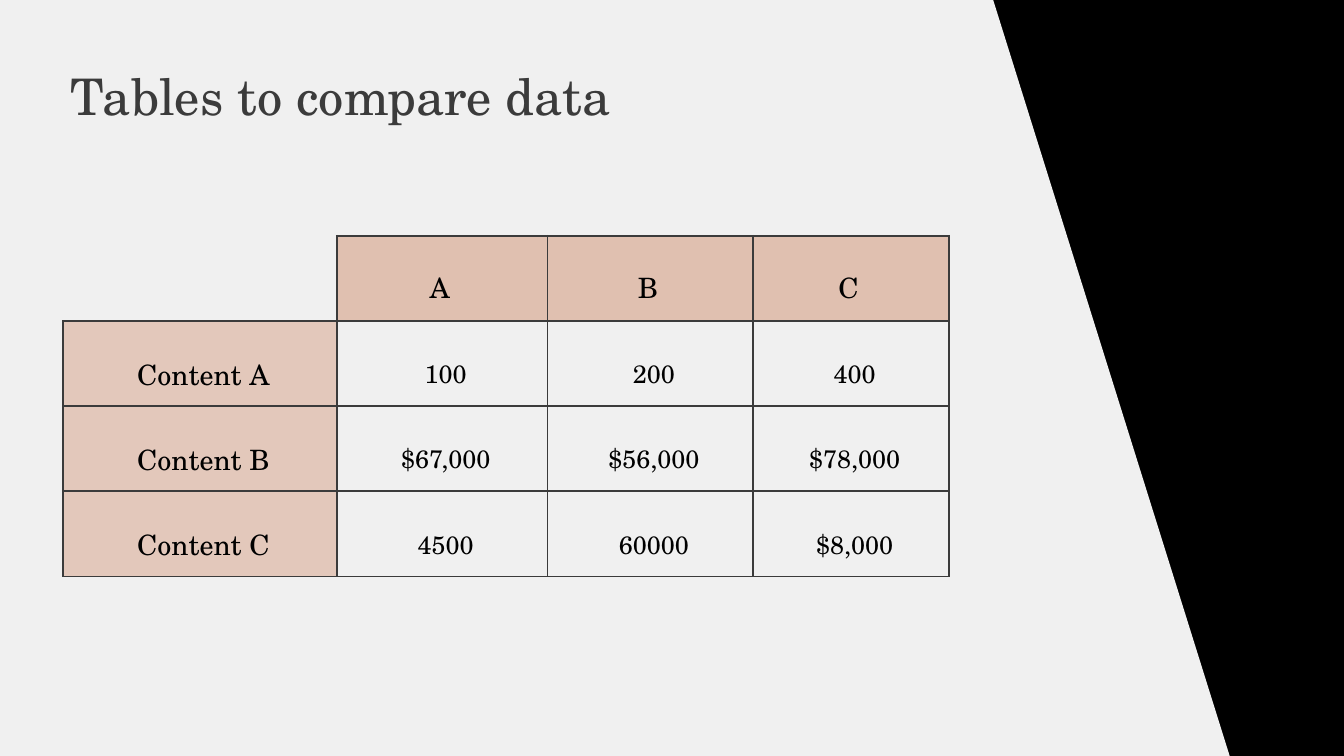
"""Build a slide with a comparison table on a slanted light panel."""
from dataclasses import dataclass
from typing import Any

from lxml import etree as et
from pptx import Presentation
from pptx import util as u
from pptx.dml import color as col
from pptx.enum import text as tx
from pptx.oxml import ns

WIDE, HIGH = u.Inches(13.33), u.Inches(7.5)


@dataclass(frozen=True)
class Theme:
    """Colours, font and type sizes."""
    back: str = "000000"
    panel: str = "F0F0F0"
    ink: str = "000000"
    dark: str = "3B3B3B"
    tint: str = "BD541E"
    face: str = "TeX Gyre Schola"
    title: float = 36
    label: float = 20
    value: float = 18
    rule: float = 1.5


@dataclass(frozen=True)
class Look:
    """Format of one kind of table cell; insets are percent shares of the slide."""
    size: float
    alpha: int
    left: float = 0.9
    top: float = 2.93
    right: float = 0.38
    base: float = 0.27
    anchor: Any = tx.MSO_ANCHOR.MIDDLE


T = Theme()
HEAD = Look(T.label, 30, left=0, top=4.13, base=0, anchor=tx.MSO_ANCHOR.TOP)
SIDE = Look(T.label, 25)
BODY = Look(T.value, 0)
EDGE = [(0, 0), (73.9, 0), (91.5, 100), (0, 100)]
COLS = [20.37, 15.67, 15.32, 14.55]
ROW = 11.27
DATA = [
    ["", "A", "B", "C"],
    ["Content A", "100", "200", "400"],
    ["Content B", "$67,000", "$56,000", "$78,000"],
    ["Content C", "4500", "60000", "$8,000"],
]


def across(pct: float) -> int:
    """Turn a percent of the slide width into a length."""
    return u.Emu(round(WIDE * pct / 100))


def down(pct: float) -> int:
    """Turn a percent of the slide height into a length."""
    return u.Emu(round(HIGH * pct / 100))


def apply(item: Any, form: dict[str, Any]) -> None:
    """Set each named value on an object."""
    for name, value in form.items():
        setattr(item, name, value)


def paint(fill: Any, hue: str) -> None:
    """Give a fill one solid colour."""
    fill.solid()
    fill.fore_color.rgb = col.RGBColor.from_string(hue)


def write(frame: Any, words: str, size: float, hue: str, align: Any) -> None:
    """Put one styled line into a text frame."""
    para = frame.paragraphs[0]
    para.alignment = align
    run = para.add_run()
    run.text = words
    apply(run.font, {"name": T.face, "size": u.Pt(size), "bold": False})
    run.font.color.rgb = col.RGBColor.from_string(hue)


def border(cell: Any, shown: str) -> None:
    """Draw the named sides of a cell and hide the others."""
    props = cell._tc.get_or_add_tcPr()
    for spot, side in enumerate("LRTB"):
        line = et.Element(ns.qn(f"a:ln{side}"), w=str(u.Pt(T.rule)))
        if side in shown:
            solid = et.SubElement(line, ns.qn("a:solidFill"))
            et.SubElement(solid, ns.qn("a:srgbClr"), val=T.dark)
        else:
            et.SubElement(line, ns.qn("a:noFill"))
        props.insert(spot, line)


def dress(cell: Any, words: str, look: Look) -> None:
    """Fill, inset and write one table cell."""
    apply(cell, {
        "margin_left": across(look.left), "margin_right": across(look.right),
        "margin_top": down(look.top), "margin_bottom": down(look.base),
        "vertical_anchor": look.anchor,
    })
    if words and look.alpha:
        paint(cell.fill, T.tint)
        tone = cell._tc.tcPr.find(f".//{ns.qn('a:srgbClr')}")
        et.SubElement(tone, ns.qn("a:alpha"), val=str(look.alpha * 1000))
    else:
        cell.fill.background()
    if words:
        write(cell.text_frame, words, look.size, T.ink, tx.PP_ALIGN.CENTER)
    border(cell, "LRTB" if words else "RB")


def panel(slide: Any) -> None:
    """Draw the light slanted panel."""
    spots = [(across(x), down(y)) for x, y in EDGE]
    build = slide.shapes.build_freeform(*spots[0])
    build.add_line_segments(spots[1:])
    shape = build.convert_to_shape()
    shape.shadow.inherit = False
    paint(shape.fill, T.panel)
    shape.line.fill.background()


def table(slide: Any) -> None:
    """Draw the comparison table."""
    grid = slide.shapes.add_table(
        len(DATA), len(COLS), across(4.7), down(31.2),
        across(sum(COLS)), down(ROW * len(DATA))).table
    apply(grid, {"first_row": False, "horz_banding": False})
    for part, share in zip(grid.columns, COLS):
        part.width = across(share)
    for r, line in enumerate(DATA):
        grid.rows[r].height = down(ROW)
        for c, words in enumerate(line):
            look = HEAD if r == 0 else SIDE if c == 0 else BODY
            dress(grid.cell(r, c), words, look)


def title(slide: Any) -> None:
    """Write the slide title."""
    box = slide.shapes.add_textbox(across(4.5), down(8), across(70.9), down(9.47))
    apply(box.text_frame, {
        "word_wrap": True, "auto_size": tx.MSO_AUTO_SIZE.SHAPE_TO_FIT_TEXT})
    write(box.text_frame, "Tables to compare data", T.title, T.dark, tx.PP_ALIGN.LEFT)


def main() -> None:
    """Build and save the deck."""
    deck = Presentation()
    apply(deck, {"slide_width": WIDE, "slide_height": HIGH})
    slide = deck.slides.add_slide(deck.slide_layouts[6])
    paint(slide.background.fill, T.back)
    panel(slide)
    table(slide)
    title(slide)
    deck.save("out.pptx")


if __name__ == "__main__":
    main()
